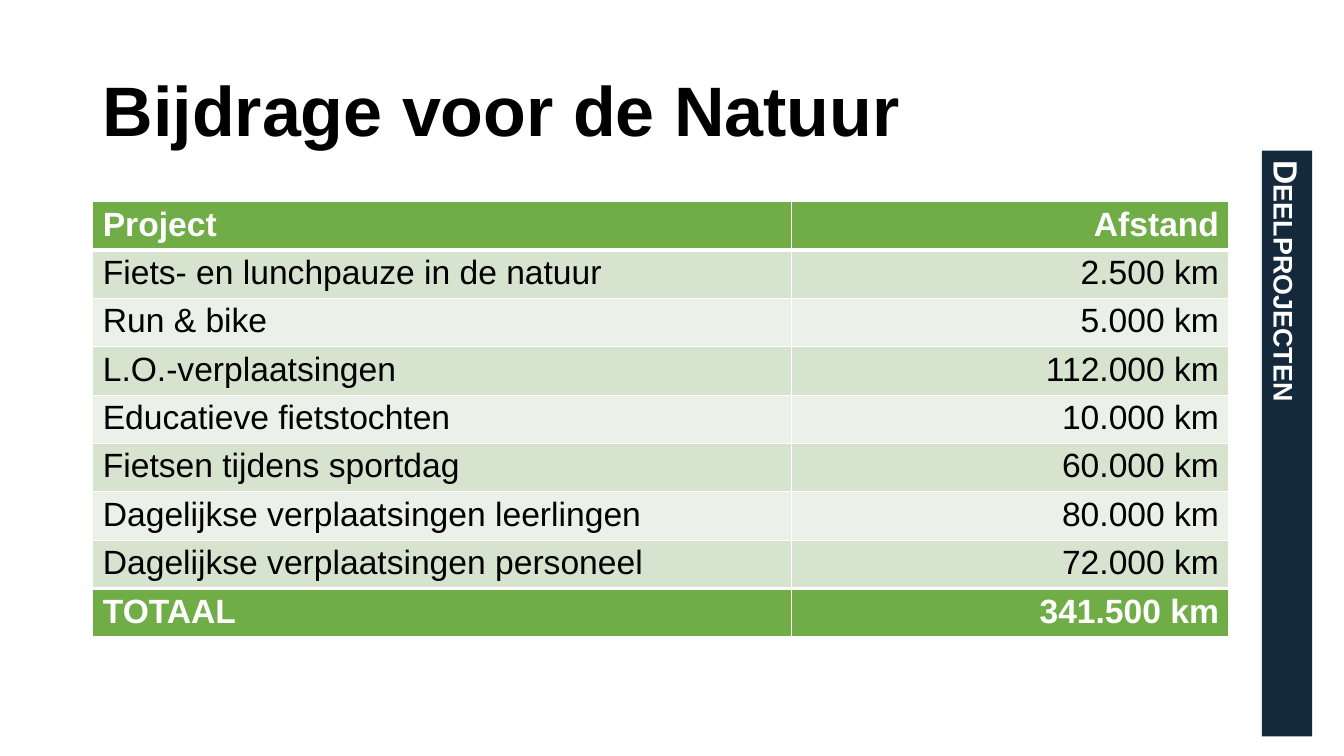
from lxml.etree import SubElement
from pptx import Presentation
from pptx.dml.color import RGBColor
from pptx.enum.shapes import MSO_SHAPE
from pptx.enum.text import MSO_ANCHOR, PP_ALIGN
from pptx.oxml.ns import qn
from pptx.util import Inches, Pt

WHITE, BLACK, GREEN, NAVY = "FFFFFF", "000000", "70AD47", "14293C"
BANDS = ["EBF1E9", "D5E3CF"]
ROWS = [
    ("Project", "Afstand"),
    ("Fiets- en lunchpauze in de natuur", "2.500 km"),
    ("Run & bike", "5.000 km"),
    ("L.O.-verplaatsingen", "112.000 km"),
    ("Educatieve fietstochten", "10.000 km"),
    ("Fietsen tijdens sportdag", "60.000 km"),
    ("Dagelijkse verplaatsingen leerlingen", "80.000 km"),
    ("Dagelijkse verplaatsingen personeel", "72.000 km"),
    ("TOTAAL", "341.500 km"),
]
LAST = len(ROWS) - 1
ROW_HEIGHT = 0.47


def color(value):
    return RGBColor.from_string(value)


def set_text(frame, text, size, text_color, bold):
    """Fill the frame with one middle-anchored Arial paragraph and return it."""
    frame.text = text
    paragraph = frame.paragraphs[0]
    paragraph.font.name = "Arial"
    paragraph.font.size = Pt(size)
    paragraph.font.bold = bold
    paragraph.font.color.rgb = color(text_color)
    return paragraph


presentation = Presentation()
presentation.slide_width = Inches(13.33)
presentation.slide_height = Inches(7.5)
slide = presentation.slides.add_slide(presentation.slide_layouts[6])

# Title
title = slide.shapes.add_textbox(Inches(0.92), Inches(0.4), Inches(11.27), Inches(1.45))
title.text_frame.word_wrap = True
title.text_frame.vertical_anchor = MSO_ANCHOR.MIDDLE
set_text(title.text_frame, "Bijdrage voor de Natuur", 50, BLACK, True).line_spacing = 0.9

# Distance table
table = slide.shapes.add_table(
    len(ROWS), 2, Inches(0.92), Inches(2), Inches(11.27), Inches(ROW_HEIGHT * len(ROWS))
).table
table.columns[0].width = Inches(6.93)
table.columns[1].width = Inches(4.34)

for row_index, row in enumerate(ROWS):
    table.rows[row_index].height = Inches(ROW_HEIGHT)
    strong = row_index in (0, LAST)
    borders = {
        "a:lnL": 1,
        "a:lnR": 1,
        "a:lnT": 3 if row_index in (1, LAST) else 1,
        "a:lnB": 3 if row_index in (0, LAST - 1) else 1,
    }
    for column_index, text in enumerate(row):
        cell = table.cell(row_index, column_index)
        cell.margin_top = cell.margin_bottom = Inches(0.04)
        paragraph = set_text(cell.text_frame, text, 24, WHITE if strong else BLACK, strong)
        paragraph.alignment = PP_ALIGN.RIGHT if column_index else PP_ALIGN.LEFT
        properties = cell._tc.get_or_add_tcPr()
        for tag, width in borders.items():
            line = SubElement(properties, qn(tag), w=str(Pt(width)))
            fill = SubElement(line, qn("a:solidFill"))
            SubElement(fill, qn("a:srgbClr"), val=WHITE)
        cell.fill.solid()
        cell.fill.fore_color.rgb = color(GREEN if strong else BANDS[row_index % 2])

# Section label, turned to read downwards
label = slide.shapes.add_shape(
    MSO_SHAPE.RECTANGLE, Inches(9.86), Inches(4.15), Inches(5.81), Inches(0.5)
)
label.rotation = 90
label.shadow.inherit = False
label.fill.solid()
label.fill.fore_color.rgb = color(NAVY)
label.line.fill.background()
label.text_frame.word_wrap = True
label.text_frame.vertical_anchor = MSO_ANCHOR.MIDDLE
paragraph = set_text(label.text_frame, "Deelprojecten", 24, WHITE, True)
paragraph.alignment = PP_ALIGN.LEFT
paragraph.runs[0].font._element.set("cap", "small")

presentation.save("out.pptx")
